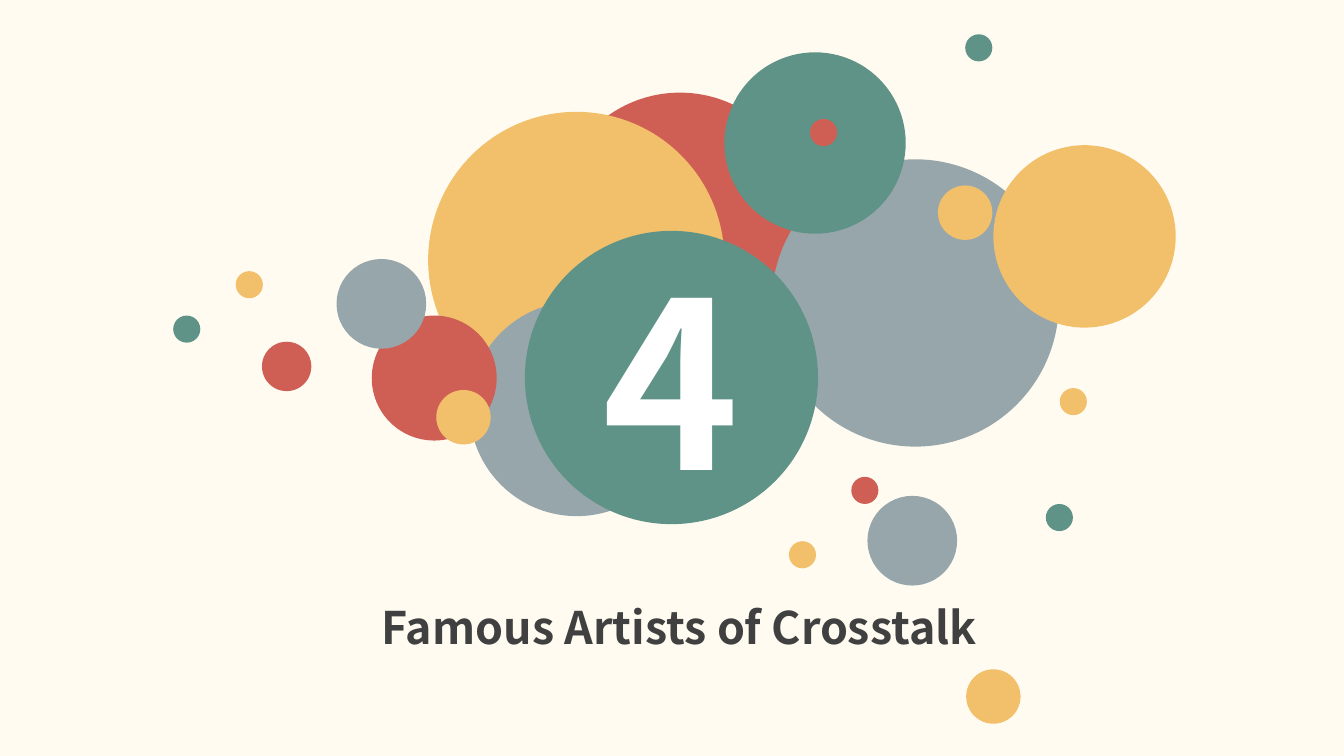
from pptx import Presentation
from pptx.dml.color import RGBColor
from pptx.enum.shapes import MSO_SHAPE
from pptx.enum.text import MSO_ANCHOR, MSO_AUTO_SIZE, PP_ALIGN
from pptx.util import Pt

OVAL = MSO_SHAPE.OVAL
MIDDLE = MSO_ANCHOR.MIDDLE
GROW = MSO_AUTO_SIZE.SHAPE_TO_FIT_TEXT
LEFT, CENTER = PP_ALIGN.LEFT, PP_ALIGN.CENTER

COLORS = {
    "cream": "FFFBF0",
    "red": "CF5F55",
    "yellow": "F2C06B",
    "gray": "97A6AB",
    "green": "5F9387",
    "white": "FFFFFF",
    "text": "404040",
}
FONT = "Noto Sans CJK SC"

# Diameters of the recurring bubbles
DOT, SMALL, MEDIUM = 19.4, 38.9, 64.1

# Bubbles from back to front: color, left, top, diameter
BUBBLES = [
    ("red", 397.4, 66.2, 177.1),
    ("yellow", 306, 79.9, 211.7),
    ("gray", 335.5, 215.3, 153.4),
    ("gray", 551.5, 113.8, 205.2),
    ("green", 517.7, 37.4, 129.6),
    ("red", 265.7, 225.4, 89.3),
    ("gray", 619.9, 354.2, MEDIUM),
    ("red", 608.4, 340.6, DOT),
    ("yellow", 563.8, 386.6, DOT),
    ("green", 747.4, 360, DOT),
    ("yellow", 690.5, 478.1, SMALL),
    ("yellow", 709.9, 103.7, 130.3),
    ("gray", 240.5, 185, MEDIUM),
    ("red", 187.2, 244.1, 35.3),
    ("yellow", 168.5, 193.7, DOT),
    ("green", 123.8, 225.4, DOT),
    ("yellow", 311.8, 278.6, SMALL),
    ("red", 578.9, 85, DOT),
    ("yellow", 757.4, 277.2, DOT),
    ("green", 689.8, 24.5, DOT),
    ("yellow", 670.3, 132.5, SMALL),
]


class SectionSlide:
    def __init__(self, slide, font, colors):
        self.slide = slide
        self.font = font
        self.colors = colors

    def color(self, name):
        return RGBColor.from_string(self.colors[name])

    def background(self, color):
        fill = self.slide.background.fill
        fill.solid()
        fill.fore_color.rgb = self.color(color)

    def bubble(self, color, left, top, diameter):
        shape = self.slide.shapes.add_shape(
            OVAL, Pt(left), Pt(top), Pt(diameter), Pt(diameter))
        shape.shadow.inherit = False
        shape.fill.solid()
        shape.fill.fore_color.rgb = self.color(color)
        shape.line.fill.background()
        return shape

    def set_text(self, text_frame, text, size, color, alignment):
        text_frame.text = text
        paragraph = text_frame.paragraphs[0]
        paragraph.alignment = alignment
        font = paragraph.runs[0].font
        font.name = self.font
        font.size = Pt(size)
        font.bold = True
        font.color.rgb = self.color(color)

    def number(self, text, size, left, top, diameter):
        text_frame = self.bubble("green", left, top, diameter).text_frame
        text_frame.vertical_anchor = MIDDLE
        self.set_text(text_frame, text, size, "white", CENTER)

    def title(self, text, size, left, top, width, height):
        box = self.slide.shapes.add_textbox(
            Pt(left), Pt(top), Pt(width), Pt(height))
        box.text_frame.word_wrap = True
        box.text_frame.auto_size = GROW
        self.set_text(box.text_frame, text, size, "text", LEFT)


def main():
    presentation = Presentation()
    presentation.slide_width = Pt(960.5)
    presentation.slide_height = Pt(540)
    blank_layout = presentation.slide_layouts[6]
    section = SectionSlide(
        presentation.slides.add_slide(blank_layout), FONT, COLORS)

    # Background and bubble cluster
    section.background("cream")
    for bubble in BUBBLES:
        section.bubble(*bubble)

    # Section number and title
    section.number("4", 166, 375.1, 164.9, 209.5)
    section.title("Famous Artists of Crosstalk", 32, 265.7, 424.8, 493.9, 46.1)

    presentation.save("out.pptx")


if __name__ == "__main__":
    main()
